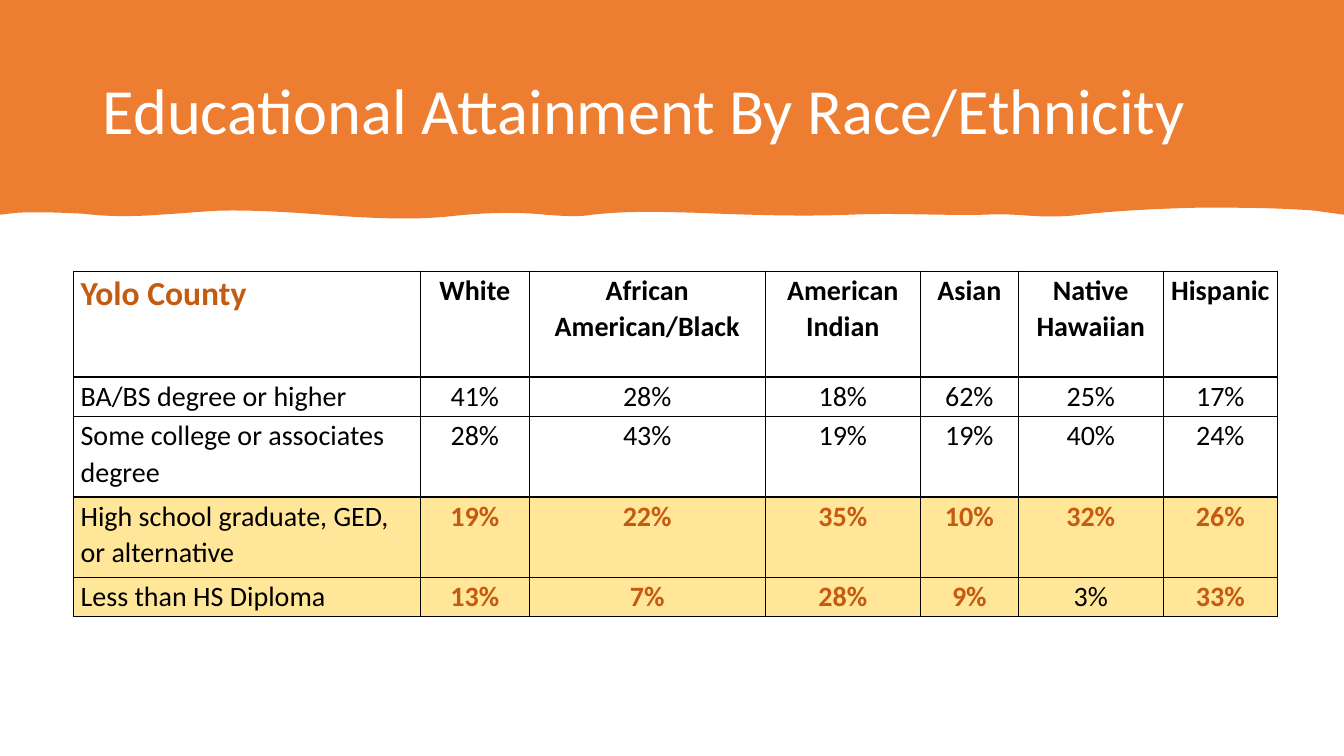
from lxml.etree import SubElement
from pptx import Presentation
from pptx.dml.color import RGBColor
from pptx.enum.text import MSO_ANCHOR, PP_ALIGN
from pptx.oxml.ns import qn
from pptx.util import Inches, Pt

ORANGE, RUST, AMBER = "ED7D31", "C55A11", "FFE699"
BLACK, WHITE = "000000", "FFFFFF"


def color(hex_string):
    return RGBColor.from_string(hex_string)


def write(frame, text, size=20, ink=BLACK, bold=False, align=PP_ALIGN.LEFT, spacing=1.07):
    paragraph = frame.paragraphs[0]
    paragraph.alignment = align
    paragraph.line_spacing = spacing
    run = paragraph.add_run()
    run.text = text
    run.font.name = "Calibri"
    run.font.size = Pt(size)
    run.font.bold = bold
    run.font.color.rgb = color(ink)


presentation = Presentation()
presentation.slide_width, presentation.slide_height = Inches(13.33), Inches(7.5)
slide = presentation.slides.add_slide(presentation.slide_layouts[5])

# Orange banner in hundredths of an inch: two control points and an end point per curve
wave_curves = [
    [(1266, 206), (1228, 206), (1190, 206)], [(1148, 207), (1105, 209), (1063, 214)],
    [(1049, 215), (1035, 215), (1021, 214)], [(1007, 213), (992, 212), (977, 213)],
    [(933, 214), (888, 211), (843, 213)], [(791, 215), (739, 213), (687, 211)],
    [(651, 210), (616, 209), (580, 214)], [(567, 215), (554, 214), (541, 213)],
    [(512, 210), (482, 211), (452, 214)], [(418, 218), (384, 217), (349, 215)],
    [(305, 212), (261, 208), (217, 209)], [(197, 210), (177, 212), (158, 213)],
    [(133, 215), (107, 215), (82, 212)], [(61, 211), (40, 210), (18, 211)],
]
right_edge = [(1333, 0), (1333, 213), (1304, 209)]
wave_ends = [curve[-1] for curve in wave_curves]
builder = slide.shapes.build_freeform(0, 0, scale=Inches(0.01))
builder.add_line_segments(right_edge + wave_ends + [(0, 213)], close=True)
banner = builder.convert_to_shape()
banner.shadow.inherit = False
banner.fill.solid()
banner.fill.fore_color.rgb = color(ORANGE)
banner.line.fill.background()

# Turn the wave's straight segments into curves
segments = list(banner.element.iter(qn("a:lnTo")))[len(right_edge):]
for segment, curve in zip(segments, wave_curves):
    segment.addprevious(bend := segment.makeelement(qn("a:cubicBezTo")))
    for x, y in curve:
        SubElement(bend, qn("a:pt"), x=str(x), y=str(y))
    segment.getparent().remove(segment)

# Title, in front of the banner
title = slide.shapes.title
title.left, title.top = Inches(0.92), Inches(0.4)
title.width, title.height = Inches(11.5), Inches(1.45)
title.text_frame.vertical_anchor = MSO_ANCHOR.MIDDLE
write(title.text_frame, "Educational Attainment By Race/Ethnicity", size=46, ink=WHITE, spacing=0.9)
title.element.addprevious(banner.element)

# Attainment table
attainment = [
    ("Yolo County", "White", "African American/Black", "American Indian", "Asian",
     "Native Hawaiian", "Hispanic"),
    ("BA/BS degree or higher", "41%", "28%", "18%", "62%", "25%", "17%"),
    ("Some college or associates degree", "28%", "43%", "19%", "19%", "40%", "24%"),
    ("High school graduate, GED, or alternative", "19%", "22%", "35%", "10%", "32%", "26%"),
    ("Less than HS Diploma", "13%", "7%", "28%", "9%", "3%", "33%"),
]
column_widths = [3.44, 1.08, 2.34, 1.54, 0.97, 1.44, 1.13]
row_heights = [1.05, 0.39, 0.8, 0.8, 0.39]
FIRST_HIGHLIGHTED_ROW = 3
UNSTRESSED = (4, 5)

table = slide.shapes.add_table(
    len(row_heights), len(column_widths), Inches(0.73), Inches(2.69),
    Inches(sum(column_widths)), Inches(sum(row_heights))).table
for column, width in zip(table.columns, column_widths):
    column.width = Inches(width)

for r, (labels, height) in enumerate(zip(attainment, row_heights)):
    table.rows[r].height = Inches(height)
    highlighted = r >= FIRST_HIGHLIGHTED_ROW
    for c, label in enumerate(labels):
        cell = table.cell(r, c)
        cell.margin_left = cell.margin_right = Inches(0.07)
        cell.margin_top = cell.margin_bottom = 0

        # Borders come before the fill in the cell properties
        properties = cell._tc.get_or_add_tcPr()
        for side in ("a:lnL", "a:lnR", "a:lnT", "a:lnB"):
            border = SubElement(properties, qn(side), w=str(Pt(1)))
            SubElement(SubElement(border, qn("a:solidFill")), qn("a:srgbClr"), val=BLACK)
        if highlighted:
            cell.fill.solid()
            cell.fill.fore_color.rgb = color(AMBER)
        else:
            cell.fill.background()

        corner = r == 0 and c == 0
        stressed = highlighted and c > 0 and (r, c) != UNSTRESSED
        write(cell.text_frame, label,
              size=24 if corner else 20,
              ink=RUST if corner or stressed else BLACK,
              bold=r == 0 or stressed,
              align=PP_ALIGN.CENTER if c else PP_ALIGN.LEFT)

presentation.save("out.pptx")
